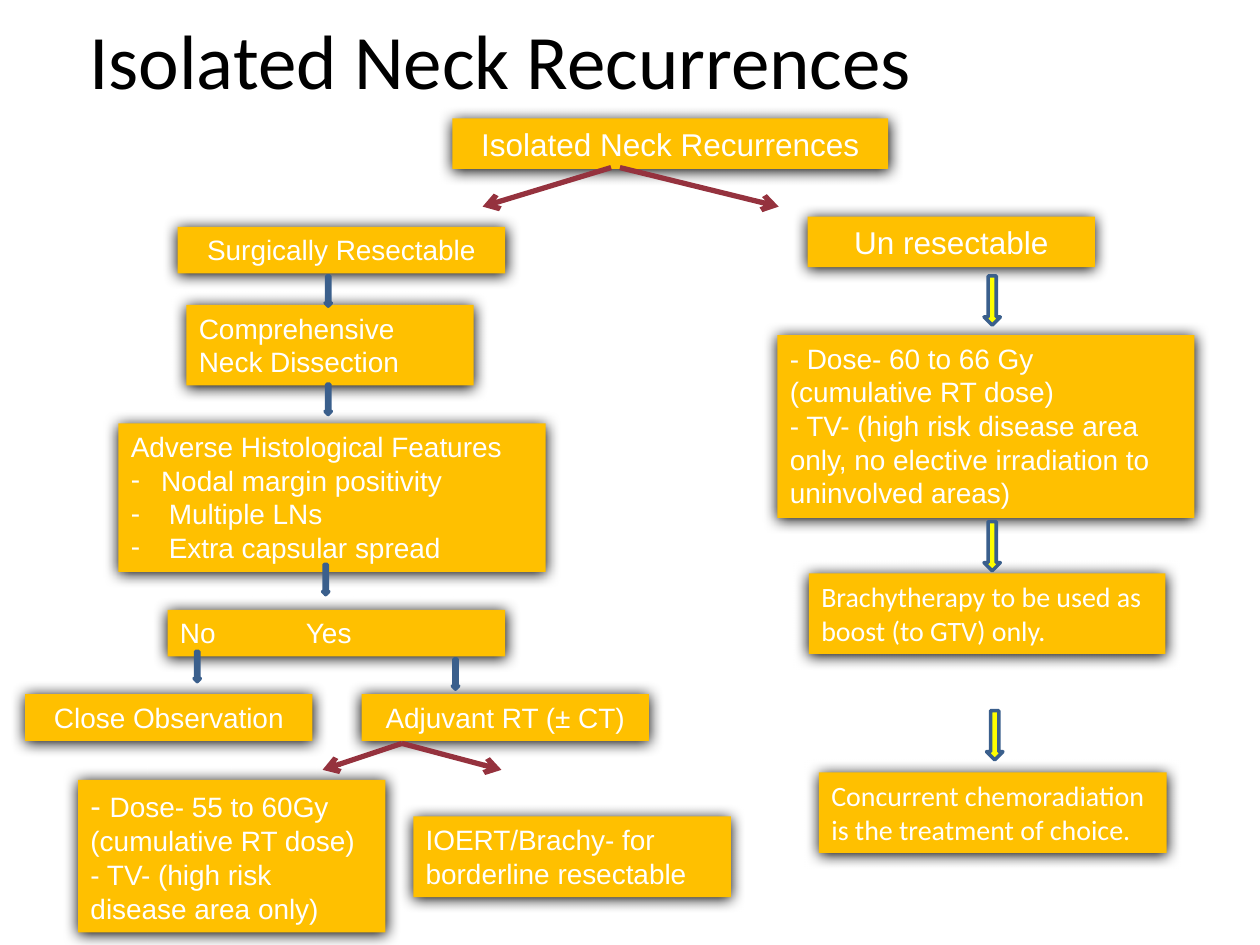
from lxml.etree import SubElement
from pptx import Presentation
from pptx.dml.color import RGBColor
from pptx.enum.shapes import MSO_CONNECTOR, MSO_SHAPE
from pptx.enum.text import MSO_ANCHOR, MSO_AUTO_SIZE, PP_ALIGN
from pptx.oxml.ns import qn
from pptx.util import Inches, Pt

AMBER = RGBColor(0xFF, 0xC0, 0x00)
YELLOW = RGBColor(0xFF, 0xFF, 0x00)
BLUE = RGBColor(0x3A, 0x5F, 0x8C)
RED = RGBColor(0x95, 0x32, 0x3E)
WHITE = RGBColor(0xFF, 0xFF, 0xFF)
BLACK = RGBColor(0x00, 0x00, 0x00)

TITLE = "Isolated Neck Recurrences"
BULLET = "• "  # marks a line that becomes a dash bullet
HEADING = {"size": 18, "align": PP_ALIGN.CENTER}
CENTERED = {"align": PP_ALIGN.CENTER}
CALIBRI = {"font": "Calibri"}

# (left, top, width, height), lines, text format
BOXES = [
    ((3.59, 0.94, 3.46, 0.4), ["Isolated Neck Recurrences"], HEADING),
    ((3.28, 6.48, 2.52, 0.64), ["IOERT/Brachy- for borderline resectable"], {}),
    ((0.2, 5.51, 2.28, 0.37), ["Close Observation"], CENTERED),
    ((2.87, 5.51, 2.28, 0.37), ["Adjuvant RT (± CT)"], CENTERED),
    ((0.62, 6.19, 2.44, 1.21),
     ["- Dose- 55 to 60Gy", "(cumulative RT dose)", "- TV- (high risk disease area only)"],
     {"lead_size": 18}),
    ((1.33, 4.84, 2.68, 0.37), ["No\t\tYes"], {}),
    ((0.94, 3.36, 3.39, 1.18),
     ["Adverse Histological Features", BULLET + "Nodal margin positivity",
      BULLET + " Multiple LNs", BULLET + " Extra capsular spread"], {}),
    ((1.48, 2.42, 2.28, 0.64), ["Comprehensive Neck Dissection"], {}),
    ((6.41, 1.72, 2.28, 0.4), ["Un resectable"], HEADING),
    ((1.41, 1.8, 2.6, 0.37), ["Surgically Resectable"], CENTERED),
    ((6.17, 2.66, 3.31, 1.45),
     ["- Dose- 60 to 66 Gy", "(cumulative RT dose)",
      "- TV- (high risk disease area only, no elective irradiation to uninvolved areas)"], {}),
    ((6.42, 4.55, 2.83, 0.64), ["Brachytherapy to be used as boost (to GTV) only."], CALIBRI),
    ((6.5, 6.13, 2.76, 0.64), ["Concurrent chemoradiation is the treatment of choice."], CALIBRI),
]

# (width, height) of a down arrow: the (left, top) places where it stands
DOWN_ARROWS = {
    (0.05, 0.24): [(2.58, 2.19), (2.58, 3.05), (2.56, 4.48), (1.54, 5.17), (3.59, 5.23)],
    (0.13, 0.39): [(7.81, 2.19), (7.81, 4.14), (7.83, 5.64)],
}

# (from x, from y, to x, to y)
BRANCHES = [
    (3.19, 5.9, 2.56, 6.11),
    (3.19, 5.9, 3.98, 6.11),
    (4.85, 1.33, 3.83, 1.64),
    (4.92, 1.33, 6.18, 1.64),
]


def write_text(frame, lines, size=16, font="Arial", color=WHITE,
               align=PP_ALIGN.LEFT, lead_size=None):
    """Fill a frame, one paragraph a line; lead_size sets the first two characters."""
    for index, line in enumerate(lines):
        para = frame.paragraphs[0] if index == 0 else frame.add_paragraph()
        if line.startswith(BULLET):
            line = line.removeprefix(BULLET)
            add_dash(para)
        para.alignment = align
        spans = [(line, size)]
        if lead_size and index == 0:
            spans = [(line[:2], lead_size), (line[2:], size)]
        for text, span_size in spans:
            span = para.add_run()
            span.text = text
            span.font.size = Pt(span_size)
            span.font.name = font
            span.font.color.rgb = color


def add_dash(para):
    properties = para._p.get_or_add_pPr()
    indent = Inches(0.24)
    properties.set("marL", str(indent))
    properties.set("indent", str(-indent))
    SubElement(properties, qn("a:buFont"), typeface="Arial")
    SubElement(properties, qn("a:buChar"), char="-")


def add_shadow(shape):
    effects = shape._element.spPr.find(qn("a:effectLst"))
    shadow = SubElement(effects, qn("a:outerShdw"), blurRad=str(Pt(8.5)), dist=str(Pt(1)),
                        dir="5400000", algn="ctr", rotWithShape="0")
    SubElement(shadow, qn("a:srgbClr"), val=str(BLACK))


def add_filled_shape(slide, kind, place, fill):
    shape = slide.shapes.add_shape(kind, *map(Inches, place))
    shape.shadow.inherit = False
    shape.fill.solid()
    shape.fill.fore_color.rgb = fill
    return shape


def add_box(slide, place, lines, text_format):
    box = add_filled_shape(slide, MSO_SHAPE.RECTANGLE, place, AMBER)
    box.line.fill.background()
    add_shadow(box)
    frame = box.text_frame
    frame.word_wrap = True
    frame.auto_size = MSO_AUTO_SIZE.SHAPE_TO_FIT_TEXT
    frame.vertical_anchor = MSO_ANCHOR.TOP
    write_text(frame, lines, **text_format)


def add_down_arrow(slide, place):
    arrow = add_filled_shape(slide, MSO_SHAPE.DOWN_ARROW, place, YELLOW)
    arrow.line.color.rgb = BLUE
    arrow.line.width = Pt(2)


def add_branch(slide, ends):
    branch = slide.shapes.add_connector(MSO_CONNECTOR.STRAIGHT, *map(Inches, ends))
    branch.line.color.rgb = RED
    branch.line.width = Pt(3)
    SubElement(branch.line._get_or_add_ln(), qn("a:tailEnd"), type="arrow")
    SubElement(branch._element.spPr, qn("a:effectLst"))


def main():
    deck = Presentation()
    deck.slide_width, deck.slide_height = Inches(10), Inches(7.5)
    page = deck.slides.add_slide(deck.slide_layouts[5])

    title = page.shapes.title
    title.left, title.top, title.width, title.height = map(Inches, (0, 0, 7.95, 0.93))
    title.text_frame.vertical_anchor = MSO_ANCHOR.MIDDLE
    write_text(title.text_frame, [TITLE], size=44, font="Calibri", color=BLACK,
               align=PP_ALIGN.CENTER)

    for place, lines, text_format in BOXES:
        add_box(page, place, lines, text_format)
    for size, corners in DOWN_ARROWS.items():
        for corner in corners:
            add_down_arrow(page, corner + size)
    for ends in BRANCHES:
        add_branch(page, ends)

    deck.save("out.pptx")


if __name__ == "__main__":
    main()
